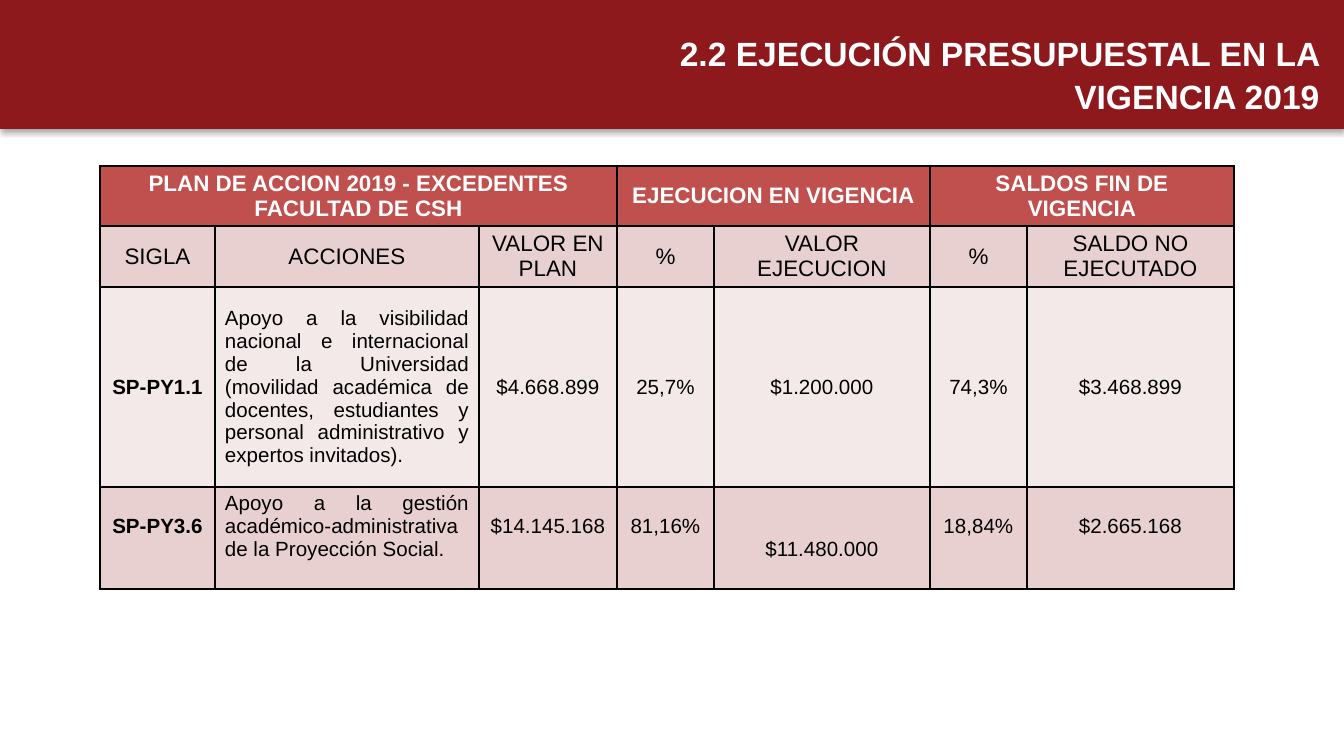
from lxml import etree
from pptx import Presentation
from pptx.dml.color import RGBColor
from pptx.enum.shapes import MSO_SHAPE
from pptx.enum.text import MSO_ANCHOR, MSO_AUTO_SIZE, PP_ALIGN
from pptx.oxml import parse_xml
from pptx.oxml.ns import nsdecls, qn
from pptx.util import Emu, Pt

CENTER, JUSTIFY, RIGHT = PP_ALIGN.CENTER, PP_ALIGN.JUSTIFY, PP_ALIGN.RIGHT
TOP, MIDDLE = MSO_ANCHOR.TOP, MSO_ANCHOR.MIDDLE

EMU_PER_PX = 914400 / 134.4
SLIDE_W, SLIDE_H = 1344, 756
BANNER_RED, WHITE, BLACK = "8D191D", "FFFFFF", "000000"
HEADING_RED, ROSE, PALE_ROSE = "C0504D", "E8D0D0", "F4E9E9"

COLUMN_WIDTHS = [115, 264, 138, 97, 216, 97, 207]
ROW_HEIGHTS = [60, 61, 200, 102]
INSET_X, INSET_Y = 10, 5
LAST_ROW_INSETS = [28, INSET_Y, 28, 28, 51, 28, 28]

# Column groups: first column, last column, heading
GROUPS = [
    (0, 2, "PLAN DE ACCION 2019 - EXCEDENTES FACULTAD DE CSH"),
    (3, 4, "EJECUCION EN VIGENCIA"),
    (5, 6, "SALDOS FIN DE VIGENCIA"),
]
COLUMN_HEADS = ["SIGLA", "ACCIONES", "VALOR EN PLAN", "%",
                "VALOR EJECUCION", "%", "SALDO NO EJECUTADO"]
ACTIONS = [
    ["SP-PY1.1",
     "Apoyo a la visibilidad nacional e internacional de la Universidad "
     "(movilidad académica de docentes, estudiantes y personal "
     "administrativo y expertos invitados).",
     "$4.668.899", "25,7%", "$1.200.000", "74,3%", "$3.468.899"],
    ["SP-PY3.6",
     "Apoyo a la gestión académico-administrativa de la Proyección Social.",
     "$14.145.168", "81,16%", "$11.480.000", "18,84%", "$2.665.168"],
]


def px(length):
    return Emu(round(length * EMU_PER_PX))


def color(hex_value):
    return RGBColor.from_string(hex_value)


def set_all(target, values):
    for name, value in values.items():
        setattr(target, name, value)


def write(frame, text, align, size, ink, bold=False):
    frame.text = text
    paragraph = frame.paragraphs[0]
    paragraph.alignment = align
    font = paragraph.runs[0].font
    set_all(font, {"name": "Arial", "size": Pt(size), "bold": bold})
    font.color.rgb = color(ink)
    return paragraph


def add_borders(cell):
    properties = cell._tc.get_or_add_tcPr()
    for index, side in enumerate(("lnL", "lnR", "lnT", "lnB")):
        properties.insert(index, parse_xml(
            f'<a:{side} {nsdecls("a")} w="12700"><a:solidFill>'
            f'<a:srgbClr val="{BLACK}"/></a:solidFill></a:{side}>'))


def add_banner(slide, left, top, width, height):
    band = slide.shapes.add_shape(
        MSO_SHAPE.RECTANGLE, px(left), px(top), px(width), px(height))
    band.fill.solid()
    band.fill.fore_color.rgb = color(BANNER_RED)
    band.line.color.rgb = color(BANNER_RED)
    band.line.width = Pt(0.75)

    # Soft shadow below the band
    band.shadow.inherit = False
    effects = band._element.spPr.find(qn("a:effectLst"))
    shadow = etree.SubElement(
        effects, qn("a:outerShdw"), blurRad=str(Pt(3.1)), dist=str(Pt(1.8)),
        dir="5400000", algn="t", rotWithShape="0")
    shade = etree.SubElement(shadow, qn("a:srgbClr"), val=BLACK)
    etree.SubElement(shade, qn("a:alpha"), val="35000")

    # The band goes behind the title placeholder
    title = slide.shapes.title
    title._element.addprevious(band._element)
    set_all(title, {"left": px(left + 535), "top": px(top + 23),
                    "width": px(798), "height": px(95)})
    set_all(title.text_frame, {"vertical_anchor": TOP, "word_wrap": True,
                               "auto_size": MSO_AUTO_SIZE.NONE})
    heading = write(title.text_frame,
                    "2.2 EJECUCIÓN PRESUPUESTAL EN LA VIGENCIA 2019",
                    RIGHT, 18, WHITE, bold=True)
    heading.line_spacing = 1.07


def add_budget_table(slide, left, top):
    table = slide.shapes.add_table(
        len(ROW_HEIGHTS), len(COLUMN_WIDTHS), px(left), px(top),
        px(sum(COLUMN_WIDTHS)), px(sum(ROW_HEIGHTS))).table
    set_all(table, {"first_row": False, "horz_banding": False})
    for column, width in zip(table.columns, COLUMN_WIDTHS):
        column.width = px(width)
    for row, height, fill in zip(table.rows, ROW_HEIGHTS,
                                 [HEADING_RED, ROSE, PALE_ROSE, ROSE]):
        row.height = px(height)
        for cell in row.cells:
            cell.fill.solid()
            cell.fill.fore_color.rgb = color(fill)
            add_borders(cell)
            set_all(cell, {"vertical_anchor": MIDDLE,
                           "margin_left": px(INSET_X),
                           "margin_right": px(INSET_X),
                           "margin_top": px(INSET_Y),
                           "margin_bottom": px(INSET_Y)})

    # Group headings and column heads
    for first, last, heading in GROUPS:
        table.cell(0, first).merge(table.cell(0, last))
        write(table.cell(0, first).text_frame, heading, CENTER, 12, WHITE, True)
    for column, head in enumerate(COLUMN_HEADS):
        write(table.cell(1, column).text_frame, head, CENTER, 12, BLACK)

    # Actions with their amounts
    for row, action in enumerate(ACTIONS, start=2):
        for column, entry in enumerate(action):
            write(table.cell(row, column).text_frame, entry,
                  JUSTIFY if column == 1 else CENTER, 11, BLACK, column == 0)
    set_all(table.cell(2, 0), {"margin_left": px(1), "margin_right": px(1),
                               "margin_top": px(1), "margin_bottom": 0})
    for column, inset in enumerate(LAST_ROW_INSETS):
        set_all(table.cell(3, column), {"vertical_anchor": TOP,
                                        "margin_top": px(inset)})


def main():
    deck = Presentation()
    set_all(deck, {"slide_width": px(SLIDE_W), "slide_height": px(SLIDE_H)})
    slide = deck.slides.add_slide(deck.slide_layouts.get_by_name("Title Only"))
    add_banner(slide, 0, 0, SLIDE_W, 128)
    add_budget_table(slide, 100, 166)
    deck.save("out.pptx")


if __name__ == "__main__":
    main()
